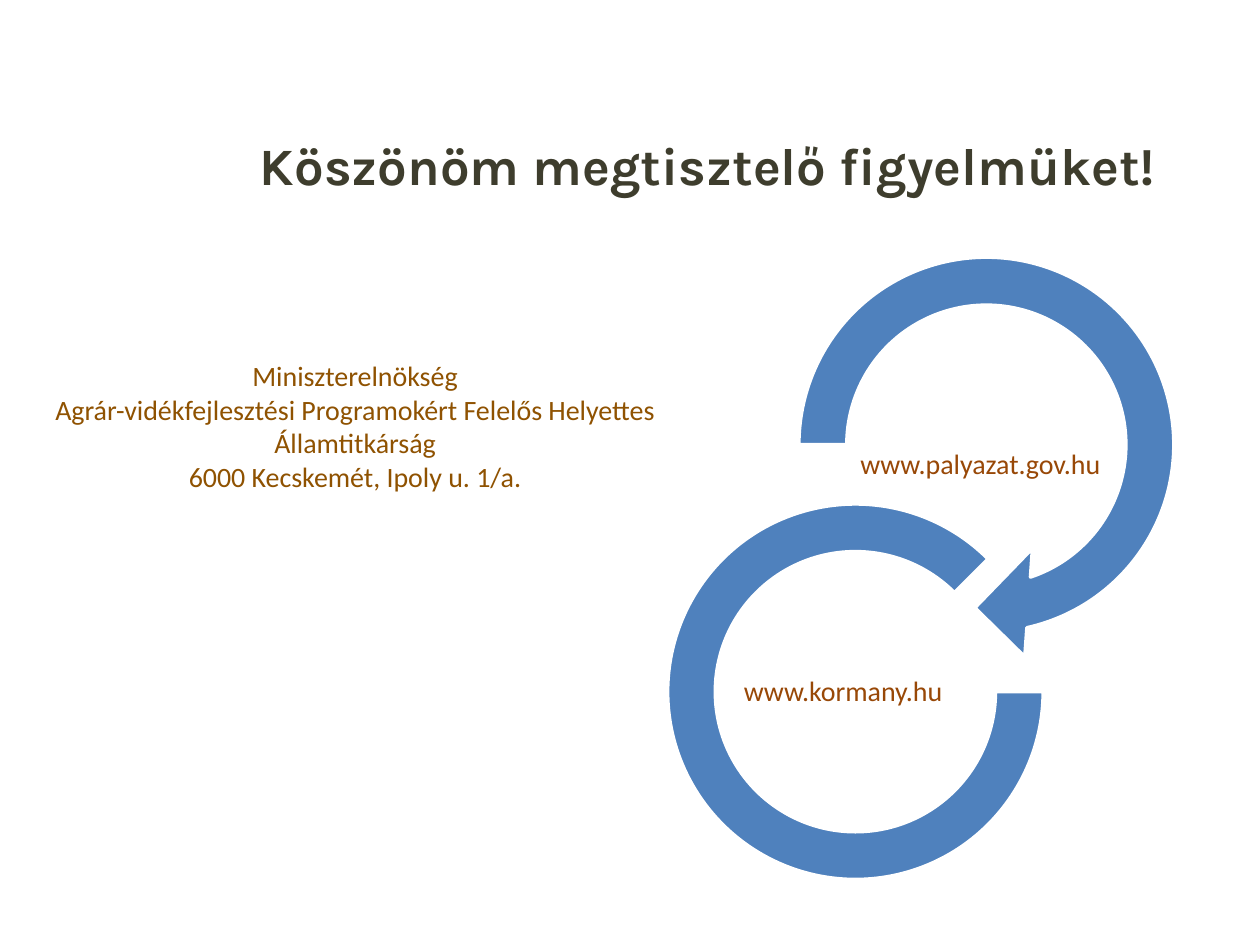
from pptx import Presentation
from pptx.dml.color import RGBColor
from pptx.enum.shapes import MSO_SHAPE
from pptx.enum.text import MSO_ANCHOR, PP_ALIGN
from pptx.util import Cm, Pt


def color(hex_code):
    return RGBColor.from_string(hex_code)


def write_lines(shape, lines, font_name, size, hex_code, bold=False):
    frame = shape.text_frame
    frame.word_wrap = True
    frame.text = "\n".join(lines)
    for para in frame.paragraphs:
        para.alignment = PP_ALIGN.CENTER
        para.font.name = font_name
        para.font.size = Pt(size)
        para.font.bold = bold
        para.font.color.rgb = color(hex_code)
    return frame


deck = Presentation()
deck.slide_width, deck.slide_height = Cm(25.4), Cm(19.05)
page = deck.slides.add_slide(deck.slide_layouts[5])

# Title
title = page.shapes.title
title.left, title.top, title.width, title.height = Cm(4.67), Cm(2.13), Cm(19.2), Cm(2.39)
frame = write_lines(title, ["Köszönöm megtisztelő figyelmüket!"], "Karla", 30, "3E3D2D", True)
frame.vertical_anchor = MSO_ANCHOR.MIDDLE

# Two linked rings, each with a web address inside
rings = [
    (MSO_SHAPE.CIRCULAR_ARROW, (15.49, 4.57, 8.79), (0.11, 11.423, 45, 108, 0.125),
     "www.palyazat.gov.hu", (16.54, 8.15, 6.45)),
    (MSO_SHAPE.BLOCK_ARC, (13.46, 10.16, 7.57), (0, 189, 0.127),
     "www.kormany.hu", (14.55, 12.73, 4.9)),
]
group = page.shapes.add_group_shape()
for kind, (left, top, size), adjustments, address, (text_left, text_top, text_width) in rings:
    ring = group.shapes.add_shape(kind, Cm(left), Cm(top), Cm(size), Cm(size))
    for index, value in enumerate(adjustments):
        ring.adjustments[index] = value
    ring.shadow.inherit = False
    ring.fill.solid()
    ring.fill.fore_color.rgb = color("4F81BD")
    ring.line.color.rgb = color("FFFFFF")
    ring.line.width = Pt(2)

    box = group.shapes.add_textbox(Cm(text_left), Cm(text_top), Cm(text_width), Cm(2.46))
    frame = write_lines(box, [address], "Calibri", 16, "984807")
    frame.vertical_anchor = MSO_ANCHOR.MIDDLE
    frame.margin_left = frame.margin_right = frame.margin_top = frame.margin_bottom = Cm(0.03)
    frame.paragraphs[0].line_spacing = 0.9

# Postal address
box = page.shapes.add_textbox(Cm(0.86), Cm(7.11), Cm(12.6), Cm(3))
write_lines(box, [
    "Miniszterelnökség",
    "Agrár-vidékfejlesztési Programokért Felelős Helyettes Államtitkárság",
    "6000 Kecskemét, Ipoly u. 1/a.",
], "Calibri", 16, "8F5201")

deck.save("out.pptx")
